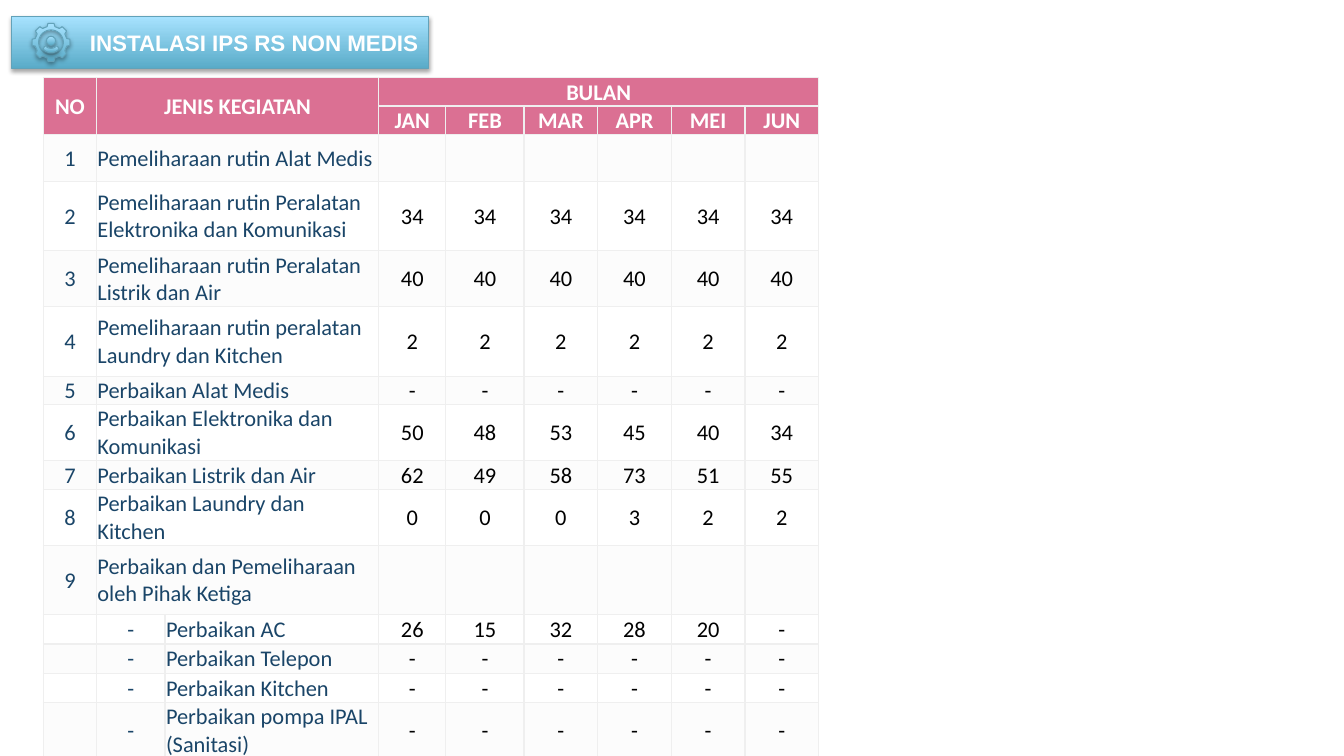
import math

import pptx
import pptx.dml.color
import pptx.enum.dml
import pptx.enum.shapes
import pptx.enum.text
import pptx.oxml
import pptx.oxml.ns
import pptx.util

RGB = pptx.dml.color.RGBColor
ALIGN = pptx.enum.text.PP_ALIGN
MIDDLE = pptx.enum.text.MSO_ANCHOR.MIDDLE
OVAL = pptx.enum.shapes.MSO_SHAPE.OVAL

WHITE = RGB(0xFF, 0xFF, 0xFF)
BLACK = RGB(0x00, 0x00, 0x00)
PINK = RGB(0xDB, 0x70, 0x93)
NAVY = RGB(0x1A, 0x45, 0x68)
PALE = RGB(0xFC, 0xFC, 0xFC)
GREY = RGB(0xEF, 0xEF, 0xEF)
TEAL = RGB(0x59, 0xAB, 0xC8)
SKY = RGB(0xA8, 0xE3, 0xFF)
EDGE = RGB(0x62, 0xA2, 0xB9)

XMLNS = 'xmlns:a="http://schemas.openxmlformats.org/drawingml/2006/main"'
PILL = (f'<a:prstGeom {XMLNS} prst="roundRect"><a:avLst>'
        '<a:gd name="adj" fmla="val 50000"/></a:avLst></a:prstGeom>')
SHADE = (f'<a:outerShdw {XMLNS} blurRad="40000" dist="23000" dir="5400000" '
         'rotWithShape="0"><a:srgbClr val="000000"><a:alpha val="35000"/>'
         '</a:srgbClr></a:outerShdw>')
SIDE = ('<a:{0} {1} w="12700"><a:solidFill><a:srgbClr val="{2}"/>'
        '</a:solidFill></a:{0}>')

HEAD = {"name": "Calibri", "size": pptx.util.Pt(16), "bold": True}
BODY = {**HEAD, "bold": False}
TITLE = {**HEAD, "name": "Arial"}

MONTHS = ["JAN", "FEB", "MAR", "APR", "MEI", "JUN"]
COLS = [3.95, 5.1, 15.9, 5, 5.82] + [5.48] * 4
# Number, activity, monthly values, row height
TASKS = [
    ("1", "Pemeliharaan rutin Alat Medis", [""] * 6, 6.2),
    ("2", "Pemeliharaan rutin Peralatan Elektronika dan Komunikasi", [34] * 6, 9.2),
    ("3", "Pemeliharaan rutin Peralatan Listrik dan Air", [40] * 6, 7.1),
    ("4", "Pemeliharaan rutin peralatan Laundry dan Kitchen", [2] * 6, 9.2),
    ("5", "Perbaikan Alat Medis", ["-"] * 6, 3.6),
    ("6", "Perbaikan Elektronika dan Komunikasi", [50, 48, 53, 45, 40, 34], 7.1),
    ("7", "Perbaikan Listrik dan Air", [62, 49, 58, 73, 51, 55], 3.85),
    ("8", "Perbaikan Laundry dan Kitchen", [0, 0, 0, 3, 2, 2], 6.7),
    ("9", "Perbaikan dan Pemeliharaan oleh Pihak Ketiga", [""] * 6, 9.2),
    ("", "Perbaikan AC", [26, 15, 32, 28, 20, "-"], 3.6),
    ("", "Perbaikan Telepon", ["-"] * 6, 3.6),
    ("", "Perbaikan Kitchen", ["-"] * 6, 3.6),
    ("", "Perbaikan pompa IPAL (Sanitasi)", ["-"] * 6, 7.1),
]


class Board:
    """Draws on one slide; lengths are percent of its width or height."""

    def __init__(self):
        self.deck = pptx.Presentation()
        self.deck.slide_width = pptx.util.Inches(13.33)
        self.deck.slide_height = pptx.util.Inches(7.5)
        self.slide = self.deck.slides.add_slide(self.deck.slide_layouts[5])
        self.shapes = self.slide.shapes

    def wide(self, share):
        return round(self.deck.slide_width * share / 100)

    def high(self, share):
        return round(self.deck.slide_height * share / 100)

    def label(self, frame, text, form, color, align):
        para = frame.paragraphs[0]
        para.alignment = align
        run = para.add_run()
        run.text = str(text)
        for name, value in form.items():
            setattr(run.font, name, value)
        run.font.color.rgb = color

    def gloss(self, shape):
        """Give a shape the blue gradient, thin edge and soft shadow."""
        shape.fill.gradient()
        shape.fill.gradient_angle = 90
        for stop, color in zip(shape.fill.gradient_stops, (TEAL, SKY)):
            stop.color.rgb = color
        shape.line.color.rgb = EDGE
        shape.line.width = pptx.util.Pt(0.75)
        shape.shadow.inherit = False
        effect = shape.element.spPr.find(pptx.oxml.ns.qn("a:effectLst"))
        effect.append(pptx.oxml.parse_xml(SHADE))

    def title(self, text, left, top, width, height):
        shape = self.shapes.title
        place = {"left": self.wide(left), "top": self.high(top),
                 "width": self.wide(width), "height": self.high(height)}
        for name, value in place.items():
            setattr(shape, name, value)
        shape.element.spPr.append(pptx.oxml.parse_xml(PILL))
        self.gloss(shape)
        frame = shape.text_frame
        frame.auto_size = pptx.enum.text.MSO_AUTO_SIZE.NONE
        frame.word_wrap = True
        frame.vertical_anchor = MIDDLE
        self.label(frame, text, TITLE, WHITE, ALIGN.RIGHT)

    def polar(self, x, y, radius, angle):
        turn = math.radians(angle)
        size = self.wide(radius)
        return (round(self.wide(x) + size * math.cos(turn)),
                round(self.high(y) + size * math.sin(turn)))

    def outline(self, *loops):
        pen = self.shapes.build_freeform(*loops[0][0])
        pen.add_line_segments(loops[0][1:], close=True)
        for loop in loops[1:]:
            pen.move_to(*loop[0])
            pen.add_line_segments(loop[1:], close=True)
        self.gloss(pen.convert_to_shape())

    def disc(self, x, y, radius):
        size = self.wide(radius)
        self.gloss(self.shapes.add_shape(
            OVAL, self.wide(x) - size, self.high(y) - size, 2 * size, 2 * size))

    def gear(self, x, y):
        """Draw an eight-toothed ring around a small figure."""
        head = y - 0.2
        tooth = [(1.2, -14), (1.43, -9), (1.43, 9), (1.2, 14)]
        rim = [self.polar(x, y, radius, mid + turn)
               for mid in range(0, 360, 45) for radius, turn in tooth]
        hole = [self.polar(x, y, 0.92, turn) for turn in range(360, 0, -6)]
        chest = [self.polar(x, y, 0.77, turn) for turn in range(40, 141, 5)]
        neck = [self.polar(x, head, 0.56, turn) for turn in range(143, 36, -5)]
        self.disc(x, head, 0.34)
        self.outline(rim, hole)
        self.outline(chest + neck)

    def table(self, left, top, cols, rows):
        frame = self.shapes.add_table(
            len(rows), len(cols), self.wide(left), self.high(top),
            self.wide(sum(cols)), self.high(sum(rows)))
        grid = frame.table
        for col, share in zip(grid.columns, cols):
            col.width = self.wide(share)
        for row, share in zip(grid.rows, rows):
            row.height = self.high(share)
        return grid

    def cell(self, cell, text, fill, form, color, align=ALIGN.CENTER):
        inset = pptx.util.Inches(0.01)
        style = {"margin_left": inset, "margin_top": inset, "margin_right": inset,
                 "margin_bottom": 0, "vertical_anchor": MIDDLE}
        for name, value in style.items():
            setattr(cell, name, value)
        props = cell._tc.get_or_add_tcPr()
        for side in ("lnL", "lnR", "lnT", "lnB"):
            props.append(pptx.oxml.parse_xml(SIDE.format(side, XMLNS, GREY)))
        cell.fill.solid()
        cell.fill.fore_color.rgb = fill
        self.label(cell.text_frame, text, form, color, align)


def main():
    board = Board()
    board.title("INSTALASI IPS RS NON MEDIS", 0.83, 2.13, 31.06, 6.93)

    grid = board.table(3.23, 10.27, COLS, [3.6, 3.6] + [task[3] for task in TASKS])
    for first, last in (((0, 0), (1, 0)), ((0, 1), (1, 2)), ((0, 3), (0, 8))):
        grid.cell(*first).merge(grid.cell(*last))
    heads = [["NO", "JENIS KEGIATAN", "", "BULAN"] + [""] * 5, [""] * 3 + MONTHS]
    for row, texts in enumerate(heads):
        for col, text in enumerate(texts):
            board.cell(grid.cell(row, col), text, PINK, HEAD, WHITE)

    for row, (num, name, values, _) in enumerate(TASKS, 2):
        fill = WHITE if row % 2 else PALE
        labels = [num, name, ""] if num else ["", "-", name]
        if num:
            grid.cell(row, 1).merge(grid.cell(row, 2))
        for col, text in enumerate(labels + values):
            board.cell(grid.cell(row, col), text, fill, BODY,
                       NAVY if col < 3 else BLACK,
                       ALIGN.LEFT if text == name else ALIGN.CENTER)

    board.gear(3.8, 5.6)
    board.deck.save("out.pptx")


if __name__ == "__main__":
    main()
